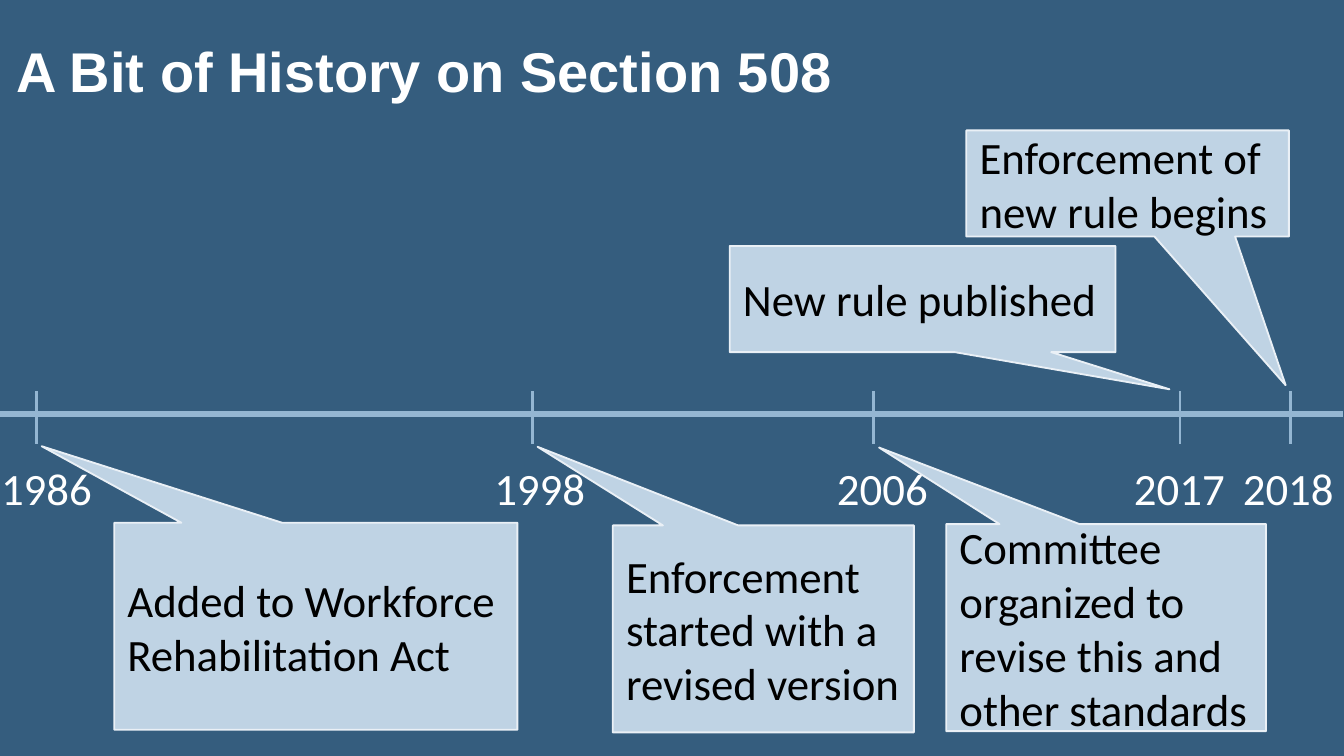
from lxml import etree
from pptx import Presentation
from pptx.dml.color import RGBColor
from pptx.enum.shapes import MSO_CONNECTOR, MSO_SHAPE
from pptx.enum.text import MSO_ANCHOR, MSO_AUTO_SIZE, PP_ALIGN
from pptx.oxml.ns import qn
from pptx.util import Inches, Pt


def paint(color, tone):
    color.rgb = RGBColor.from_string(tone)


def write(shape, text, tone, align=PP_ALIGN.LEFT, size=24, font="Calibri"):
    frame = shape.text_frame
    frame.word_wrap = True
    para = frame.paragraphs[0]
    para.alignment = align
    run = para.add_run()
    run.text = text
    run.font.size = Pt(size)
    run.font.name = font
    paint(run.font.color, tone)
    return run


deck = Presentation()
deck.slide_width = Inches(10)
deck.slide_height = deck.slide_width * 9 // 16
slide = deck.slides.add_slide(deck.slide_layouts[5])
shapes = slide.shapes
slide.background.fill.solid()
paint(slide.background.fill.fore_color, "355D7E")

title = shapes.title
title.left, title.top = Inches(0.02), Inches(0.01)
title.width, title.height = Inches(9.98), Inches(1.09)
write(title, "A Bit of History on Section 508", "FFFFFF", size=30, font="Arial").font.bold = True
title.text_frame.vertical_anchor = MSO_ANCHOR.MIDDLE
title.text_frame.auto_size = MSO_AUTO_SIZE.NONE
title.text_frame.paragraphs[0].line_spacing = 0.9

years = [("1986", 0.27, -0.13), ("1998", 3.96, 3.54), ("2006", 6.5, 6.09),
         ("2017", 8.78, 8.3), ("2018", 9.6, 9.11)]

lines = [(-0.01, 3.08, 9.99, 3.08, 3)]
lines += [(x, 2.91, x, 3.3, 1.5) for _, x, _ in years]
for x1, y1, x2, y2, width in lines:
    line = shapes.add_connector(MSO_CONNECTOR.STRAIGHT, Inches(x1), Inches(y1), Inches(x2), Inches(y2))
    line.line.width = Pt(width)
    paint(line.line.color, "94B6D2")
    etree.SubElement(line._element.spPr, qn("a:effectLst"))

for year, _, left in years:
    label = shapes.add_textbox(Inches(left), Inches(3.38), Inches(0.95), Inches(0.5))
    write(label, year, "FFFFFF", PP_ALIGN.CENTER)
    label.text_frame.auto_size = MSO_AUTO_SIZE.SHAPE_TO_FIT_TEXT

events = [
    ("Added to Workforce Rehabilitation Act", 0.85, 3.89, 3, 1.54, -0.68, -0.87),
    ("Enforcement started with a revised version", 4.56, 3.91, 2.24, 1.54, -0.75, -0.88),
    ("Committee organized to revise this and other standards", 7.04, 3.9, 2.38, 1.54, -0.71, -0.87),
    ("New rule published", 5.43, 1.83, 2.87, 0.79, 0.64, 0.85),
    ("Enforcement of new rule begins", 7.19, 0.97, 2.4, 0.79, 0.49, 1.9),
]
for text, left, top, width, height, tipx, tipy in events:
    note = shapes.add_shape(MSO_SHAPE.RECTANGULAR_CALLOUT, Inches(left), Inches(top), Inches(width), Inches(height))
    note.adjustments[0] = tipx
    note.adjustments[1] = tipy
    note.shadow.inherit = False
    note.fill.solid()
    paint(note.fill.fore_color, "BFD3E4")
    paint(note.line.color, "EAF0F6")
    note.line.width = Pt(1)
    write(note, text, "000000")
    note.text_frame.vertical_anchor = MSO_ANCHOR.MIDDLE

deck.save("out.pptx")
